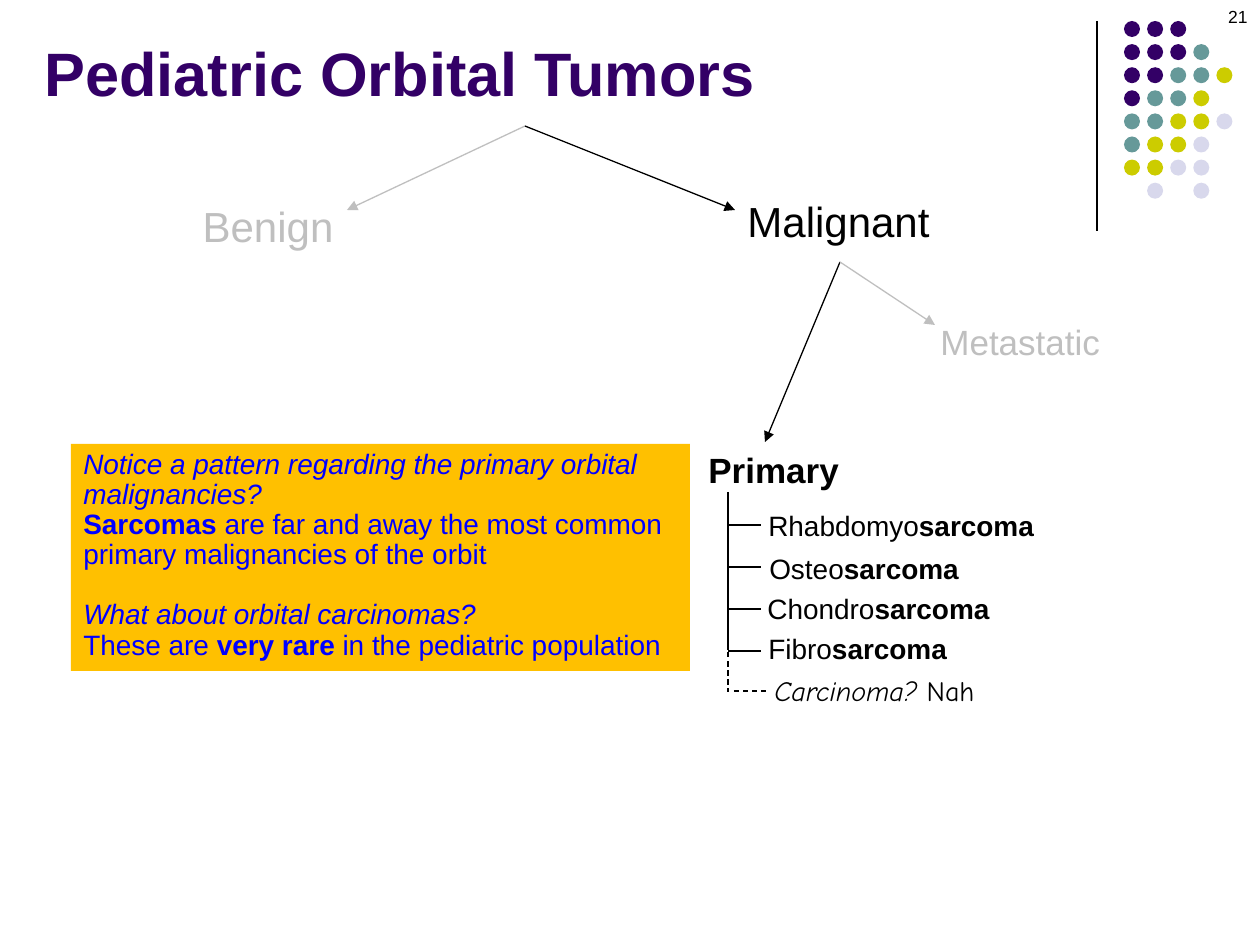
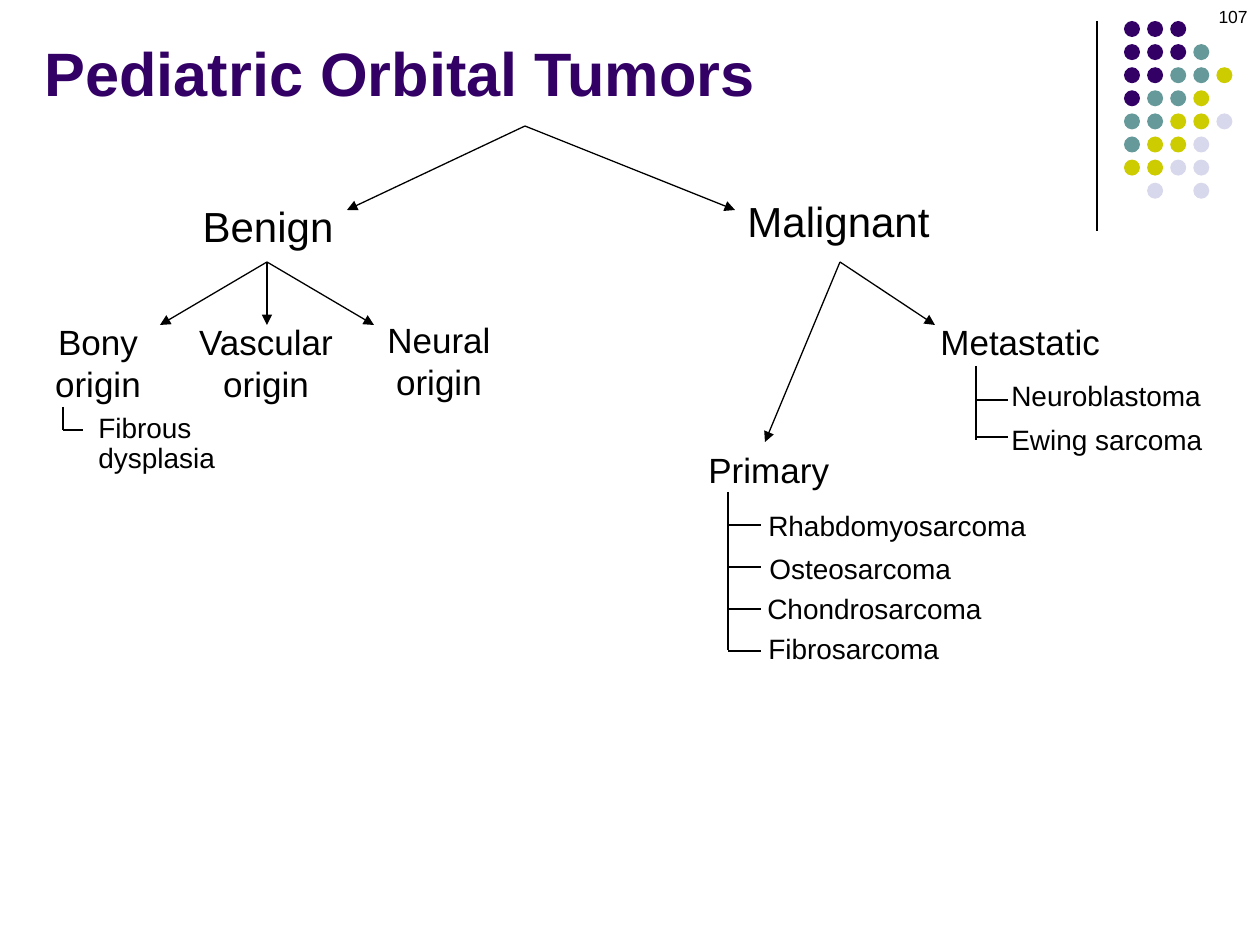
import pptx
import pptx.dml.color
import pptx.enum.dml
import pptx.enum.shapes
import pptx.enum.text
import pptx.oxml
import pptx.util

RGB = pptx.dml.color.RGBColor
ALIGN = pptx.enum.text.PP_ALIGN
FIT = pptx.enum.text.MSO_AUTO_SIZE
KIND = pptx.enum.shapes.MSO_SHAPE

BLACK = RGB(0x00, 0x00, 0x00)
GREY = RGB(0xBF, 0xBF, 0xBF)
PURPLE = RGB(0x33, 0x00, 0x66)
TEAL = RGB(0x66, 0x99, 0x99)
LIME = RGB(0xCC, 0xCC, 0x00)
MIST = RGB(0xD8, 0xD8, 0xEC)
AMBER = RGB(0xFF, 0xC0, 0x00)
BLUE = RGB(0x00, 0x00, 0xFF)

FONT = "Arial"
DOTS = ["PPP", "PPPT", "PPTTL", "PTTL", "TTLLM", "TLLM", "LLMM", " M M"]
HUES = {"P": PURPLE, "T": TEAL, "L": LIME, "M": MIST}
# Stem, left and top from the head of the list, width in plain text
SARCOMAS = [("Rhabdomyo", 28, 10, 287), ("Osteo", 29, 53, 210),
            ("Chondro", 27, 93, 242), ("Fibro", 28, 133, 198)]


def px(count):
    return pptx.util.Emu(round(count * 914400 / 126))


def style(run, size, color=BLACK, bold=False, slant=False, font=FONT):
    run.font.name, run.font.size = font, pptx.util.Pt(size)
    run.font.bold, run.font.italic = bold, slant
    run.font.color.rgb = color


def write(frame, paras, size, color=BLACK, align=ALIGN.LEFT, space=None, font=FONT):
    """Fill a frame; each paragraph is a string or a list of (words, marks) runs."""
    for i, parts in enumerate(paras):
        para = frame.paragraphs[0] if i == 0 else frame.add_paragraph()
        para.alignment = align
        if space:
            para.line_spacing = space
        if isinstance(parts, str):
            parts = [(parts, "")]
        for words, marks in parts:
            run = para.add_run()
            run.text = words
            style(run, size, color, "b" in marks, "i" in marks, font)


def label(slide, box, paras, size, wrap=False, **look):
    shape = slide.shapes.add_textbox(*map(px, box))
    frame = shape.text_frame
    frame.word_wrap = wrap
    frame.auto_size = FIT.NONE if wrap else FIT.SHAPE_TO_FIT_TEXT
    write(frame, paras, size, **look)


def line(slide, start, end, color=BLACK, arrow=False, dash=False):
    link = slide.shapes.add_connector(
        pptx.enum.shapes.MSO_CONNECTOR.STRAIGHT, *map(px, start + end))
    link.line.color.rgb = color
    link.line.width = pptx.util.Pt(0.75)
    if dash:
        link.line.dash_style = pptx.enum.dml.MSO_LINE.DASH
    props = link._element.spPr
    if arrow:
        tail = pptx.oxml.xmlchemy.OxmlElement("a:tailEnd")
        tail.set("type", "triangle")
        link.line._get_or_add_ln().append(tail)
    props.append(pptx.oxml.xmlchemy.OxmlElement("a:effectLst"))


def corner(slide, x, y):
    """Rule and dot grid at the top right."""
    line(slide, (x, y), (x, y + 210))
    group = slide.shapes.add_group_shape()
    for row, codes in enumerate(DOTS):
        for col, code in enumerate(codes):
            if code == " ":
                continue
            dot = group.shapes.add_shape(
                KIND.OVAL, px(x + 27 + 23.1 * col), px(y + 23.1 * row), px(16), px(16))
            dot.shadow.inherit = False
            dot.fill.solid()
            dot.fill.fore_color.rgb = HUES[code]
            dot.line.fill.background()


def base(deck, number):
    slide = deck.slides.add_slide(deck.slide_layouts[5])
    corner(slide, 1097, 21)
    title = slide.shapes.title
    title.left, title.top, title.width, title.height = map(px, (32, 16, 1102, 99))
    frame = title.text_frame
    frame.text = "Pediatric Orbital Tumors"
    frame.auto_size = FIT.NONE
    frame.vertical_anchor = pptx.enum.text.MSO_ANCHOR.BOTTOM
    frame.paragraphs[0].alignment = ALIGN.LEFT
    style(frame.paragraphs[0].runs[0], 35, PURPLE, bold=True)
    label(slide, (967, 0, 293, 63), [number], 10, wrap=True, align=ALIGN.RIGHT)
    return slide


def trunk(slide, x, y, side=BLACK):
    """Benign and malignant branches, down to the malignant arrows."""
    line(slide, (x, y), (x - 178, y + 84), side, arrow=True)
    line(slide, (x, y), (x + 210, y + 84), arrow=True)
    label(slide, (x - 335, y + 68, 156, 63), ["Benign"], 24, color=side, align=ALIGN.CENTER)
    label(slide, (x + 210, y + 63, 208, 63), ["Malignant"], 24)
    fork = (x + 315, y + 136)
    line(slide, fork, (x + 240, y + 316), arrow=True)
    line(slide, fork, (x + 410, y + 199), side, arrow=True)
    label(slide, (x + 403, y + 188, 186, 55), ["Metastatic"], 20, color=side)


def primary(slide, x, y, marks=""):
    """Primary tumors; marks set the weight of the shared word ending."""
    label(slide, (x - 32, y - 50, 158 if marks else 147, 55), [[("Primary", marks)]], 20)
    line(slide, (x, y), (x, y + 158))
    for i, (stem, left, top, width) in enumerate(SARCOMAS):
        tick = y + 33 + 42 * i
        line(slide, (x, tick), (x + 33, tick))
        parts = [(stem, ""), ("sarcoma", marks)] if marks else stem + "sarcoma"
        box = (x + left, y + top, width + 16 if marks else width, 47)
        label(slide, box, [parts], 16)


def doubt(slide, x, y):
    """Dashed carcinoma branch below the primary list."""
    line(slide, (x, y), (x, y + 157), dash=True)
    line(slide, (x + 6, y + 156), (x + 39, y + 156), dash=True)
    label(slide, (x + 34, y + 132, 283, 47), [[("Carcinoma?", "i"), (" Nah", "")]],
          16, font="Comic Neue")


def note(slide, box):
    shape = slide.shapes.add_shape(KIND.RECTANGLE, *map(px, box))
    shape.shadow.inherit = False
    shape.fill.solid()
    shape.fill.fore_color.rgb = AMBER
    shape.line.fill.background()
    frame = shape.text_frame
    frame.word_wrap = True
    frame.vertical_anchor = pptx.enum.text.MSO_ANCHOR.TOP
    write(frame, [
        [("Notice a pattern regarding the primary orbital malignancies?", "i")],
        [("Sarcomas", "b"),
         (" are far and away the most common primary malignancies of the orbit", "")],
        [("What about orbital carcinomas?", "i")],
        [("These are ", ""), ("very rare", "b"), (" in the pediatric population", "")],
    ], 16, BLUE, space=0.9)
    frame.paragraphs[2].space_before = pptx.util.Pt(17)


def origins(slide, x, y):
    """Benign tumors by origin."""
    for shift in (-107, 107, 0):
        line(slide, (x, y), (x + shift, y + 63), arrow=True)
    for word, left, top, width in (("Vascular", -81, 52, 160), ("Bony", -225, 52, 112),
                                   ("Neural", 107, 50, 130)):
        label(slide, (x + left, y + top, width, 97), [word, "origin"], 20, align=ALIGN.CENTER)
    label(slide, (x - 181, y + 146, 142, 73), ["Fibrous", "dysplasia"], 16,
          space=pptx.util.Pt(17))
    elbow = (x - 204, y + 168)
    line(slide, (x - 204, y + 145), elbow)
    line(slide, elbow, (x - 184, y + 168))


def spread(slide, x, y):
    """Metastatic tumors."""
    line(slide, (x, y), (x, y + 74))
    for word, tick, top in (("Neuroblastoma", 34, 6), ("Ewing sarcoma", 71, 50)):
        line(slide, (x, y + tick), (x + 32, y + tick))
        label(slide, (x + 23, y + top, 217, 47), [word], 16)


def main():
    deck = pptx.Presentation()
    deck.slide_width, deck.slide_height = px(1260), px(945)

    pattern = base(deck, "21")
    trunk(pattern, 525, 126, GREY)
    primary(pattern, 728, 492, "b")
    doubt(pattern, 728, 535)
    note(pattern, (71, 444, 619, 227))

    summary = base(deck, "107")
    trunk(summary, 525, 126)
    primary(summary, 728, 492)
    origins(summary, 267, 262)
    spread(summary, 976, 366)

    deck.save("out.pptx")


if __name__ == "__main__":
    main()
